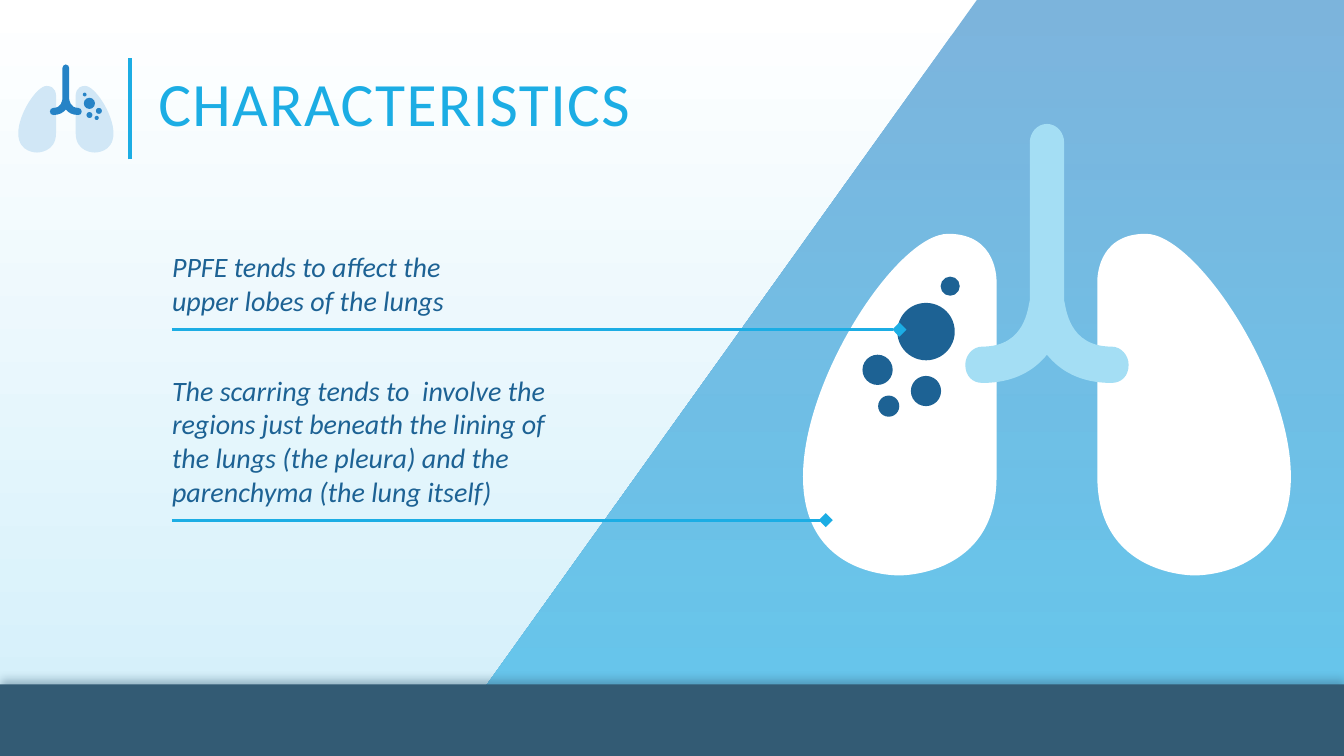
from lxml import etree
from pptx import Presentation
from pptx.dml.color import RGBColor as RGB
from pptx.enum.shapes import MSO_CONNECTOR as CONN, MSO_SHAPE as SHAPE
from pptx.enum.text import MSO_ANCHOR as ANCHOR, MSO_AUTO_SIZE as AUTO
from pptx.oxml import parse_xml
from pptx.oxml.ns import nsdecls, qn
from pptx.util import Inches, Pt

COLORS = {
    "white": "FFFFFF", "pale": "D2EFFA", "sky": "1CADE4", "blue": "2683C6",
    "navy": "1D6294", "slate": "335B74", "airway": "A4DEF4", "mist": "D1E7F6",
}
C = {name: RGB.from_string(value) for name, value in COLORS.items()}

prs = Presentation()
prs.slide_width, prs.slide_height = W, H = Inches(13.33), Inches(7.5)
COL, ROW = W / 100, H / 100
slide = prs.slides.add_slide(prs.slide_layouts[6])
shapes = slide.shapes


def add_text(text, col, row, cols, rows, size, color, italic=False,
             spacing=0, line_spacing=None, inset=0, after=0, auto_size=AUTO.NONE):
    box = shapes.add_textbox(int(col * COL), int(row * ROW),
                             int(cols * COL), int(rows * ROW))
    tf = box.text_frame
    tf.word_wrap = True
    tf.auto_size = auto_size
    tf.vertical_anchor = ANCHOR.MIDDLE
    tf.margin_left = tf.margin_right = 0
    tf.margin_top = tf.margin_bottom = Inches(inset)
    p = tf.paragraphs[0]
    p.line_spacing = line_spacing
    p.space_after = Pt(after)
    r = p.add_run()
    r.text = text
    r.font.name, r.font.size, r.font.italic = "Calibri", Pt(size), italic
    r.font.color.rgb = C[color]
    if spacing:
        r.font._element.set("spc", str(spacing * 100))


def add_outline(parent, segments):
    """Draw a closed outline; a segment is an end point, or two controls and an end."""
    ends = [segment[-1] for segment in segments]
    fb = parent.build_freeform(*ends[0])
    fb.add_line_segments(ends[1:])
    sp = fb.convert_to_shape()
    left, top = (min(values) for values in zip(*ends))
    for node, segment in zip(list(sp._element.iter(qn("a:lnTo"))), segments[1:]):
        if len(segment) == 3:
            node.clear()
            node.tag = qn("a:cubicBezTo")
            for x, y in segment:
                pt = etree.SubElement(node, qn("a:pt"))
                pt.set("x", str(x - left))
                pt.set("y", str(y - top))
    return sp


# Background and the slanted panel share a top-to-bottom gradient
corners = [(72.69, 0), (100, 0), (100, 100), (32.43, 100)]
panel = add_outline(shapes, [[(int(x * COL), int(y * ROW))] for x, y in corners])
panel.shadow.inherit = False
panel.line.fill.background()
for fill, names in ((slide.background.fill, ("white", "pale")),
                    (panel.fill, ("blue", "sky"))):
    fill.gradient()
    fill.gradient_angle = 270
    for stop, position, name in zip(fill.gradient_stops, (0, 1), names):
        stop.position = position
        stop.color.rgb = C[name]
for color in panel._element.spPr.iter(qn("a:srgbClr")):
    etree.SubElement(color, qn("a:alpha")).set("val", "60000")

# Footer band with a soft shadow above it
band = shapes.add_shape(SHAPE.RECTANGLE, 0, int(90.53 * ROW), W, int(9.47 * ROW))
band.fill.solid()
band.fill.fore_color.rgb = C["slate"]
band.line.fill.background()
band._element.spPr.append(parse_xml(
    f'<a:effectLst {nsdecls("a")}><a:outerShdw blurRad="{Pt(6)}" dist="{Pt(3)}" '
    f'dir="16200000" rotWithShape="0"><a:srgbClr val="{COLORS["slate"]}">'
    '<a:alpha val="40000"/></a:srgbClr></a:outerShdw></a:effectLst>'))

# Lungs, measured from the top of the windpipe's centre line
lung = [
    [(0.5, 1.57)],
    [(0.5, 1.57), (0.48, 1.09), (0.98, 1.09)],
    [(1.48, 1.09), (2.42, 2.52), (2.42, 3.5)],
    [(2.42, 4.51), (1.46, 4.48), (1.46, 4.48)],
    [(1.46, 4.48), (0.5, 4.49), (0.5, 3.5)],
]
other_lung = [[(-x, y) for x, y in segment] for segment in lung]
airway = [
    [(0.64, 2.21)],
    [(0.21, 2.21), (0.19, 1.82), (0.17, 1.75)],
    [(0.17, 0.18)],
    [(0.17, 0.09), (0.1, 0), (0, 0)],
    [(-0.1, 0), (-0.17, 0.09), (-0.17, 0.18)],
    [(-0.17, 1.75)],
    [(-0.19, 1.82), (-0.21, 2.21), (-0.64, 2.21)],
    [(-0.74, 2.21), (-0.81, 2.3), (-0.81, 2.39)],
    [(-0.81, 2.5), (-0.74, 2.57), (-0.64, 2.57)],
    [(-0.33, 2.57), (-0.13, 2.45), (0, 2.29)],
    [(0.13, 2.45), (0.33, 2.57), (0.64, 2.57)],
    [(0.74, 2.57), (0.81, 2.5), (0.81, 2.39)],
    [(0.81, 2.3), (0.74, 2.21), (0.64, 2.21)],
]
scars = [(1.2, 2.06, 0.57), (1.68, 2.44, 0.3), (1.2, 2.65, 0.3),
         (0.96, 1.61, 0.19), (1.57, 2.8, 0.21)]  # centre x, centre y, diameter

# Centre column, top row, rows per unit, side and lift of the scars, colours
for col, row, rows, side, lift, lung_color, airway_color, scar_color in (
        (4.9, 8.53, 2.6, 1, 0.08, "mist", "blue", "blue"),
        (77.9, 16.4, 13.33, -1, 0, "white", "airway", "navy")):
    cx, top, unit = col * COL, row * ROW, rows * ROW
    group = shapes.add_group_shape().shapes
    parts = []
    for outline, color in ((lung, lung_color), (other_lung, lung_color),
                           (airway, airway_color)):
        segments = [[(int(cx + x * unit), int(top + y * unit)) for x, y in segment]
                    for segment in outline]
        parts.append((add_outline(group, segments), color))
    for x, y, d in scars:
        sp = group.add_shape(SHAPE.OVAL, int(cx + (side * x - d / 2) * unit),
                             int(top + (y - lift - d / 2) * unit),
                             int(d * unit), int(d * unit))
        parts.append((sp, scar_color))
    for sp, color in parts:
        sp.shadow.inherit = False
        sp.fill.solid()
        sp.fill.fore_color.rgb = C[color]
        sp.line.fill.background()

add_text("CHARACTERISTICS", 11.78, 7.73, 79.74, 13.33, 44, "sky",
         spacing=1, line_spacing=0.8)
for text, row, cols, rows, after in (
        ("The scarring tends to  involve the regions just beneath the lining of "
         "the lungs (the pleura) and the parenchyma (the lung itself)",
         48.53, 30.46, 19.47, 0),
        ("PPFE tends to affect the upper lobes of the lungs", 32.2, 25.28, 10.53, 6)):
    add_text(text, 12.8, row, cols, rows, 20, "navy", italic=True, inset=0.06,
             after=after, auto_size=AUTO.SHAPE_TO_FIT_TEXT)

# Title divider and the two pointers
for x1, y1, x2, y2, width, tail in ((9.66, 21.07, 9.66, 7.73, 2.5, None),
                                    (12.8, 43.6, 66.92, 43.6, 2, "diamond"),
                                    (12.8, 68.8, 61.44, 68.8, 2, "diamond")):
    line = shapes.add_connector(CONN.STRAIGHT, int(x1 * COL), int(y1 * ROW),
                                int(x2 * COL), int(y2 * ROW))
    line.line.color.rgb = C["sky"]
    line.line.width = Pt(width)
    if tail:
        end = etree.SubElement(line.line._get_or_add_ln(), qn("a:tailEnd"))
        for key, value in (("type", tail), ("w", "lg"), ("len", "lg")):
            end.set(key, value)
    etree.SubElement(line._element.spPr, qn("a:effectLst"))

prs.save("out.pptx")
